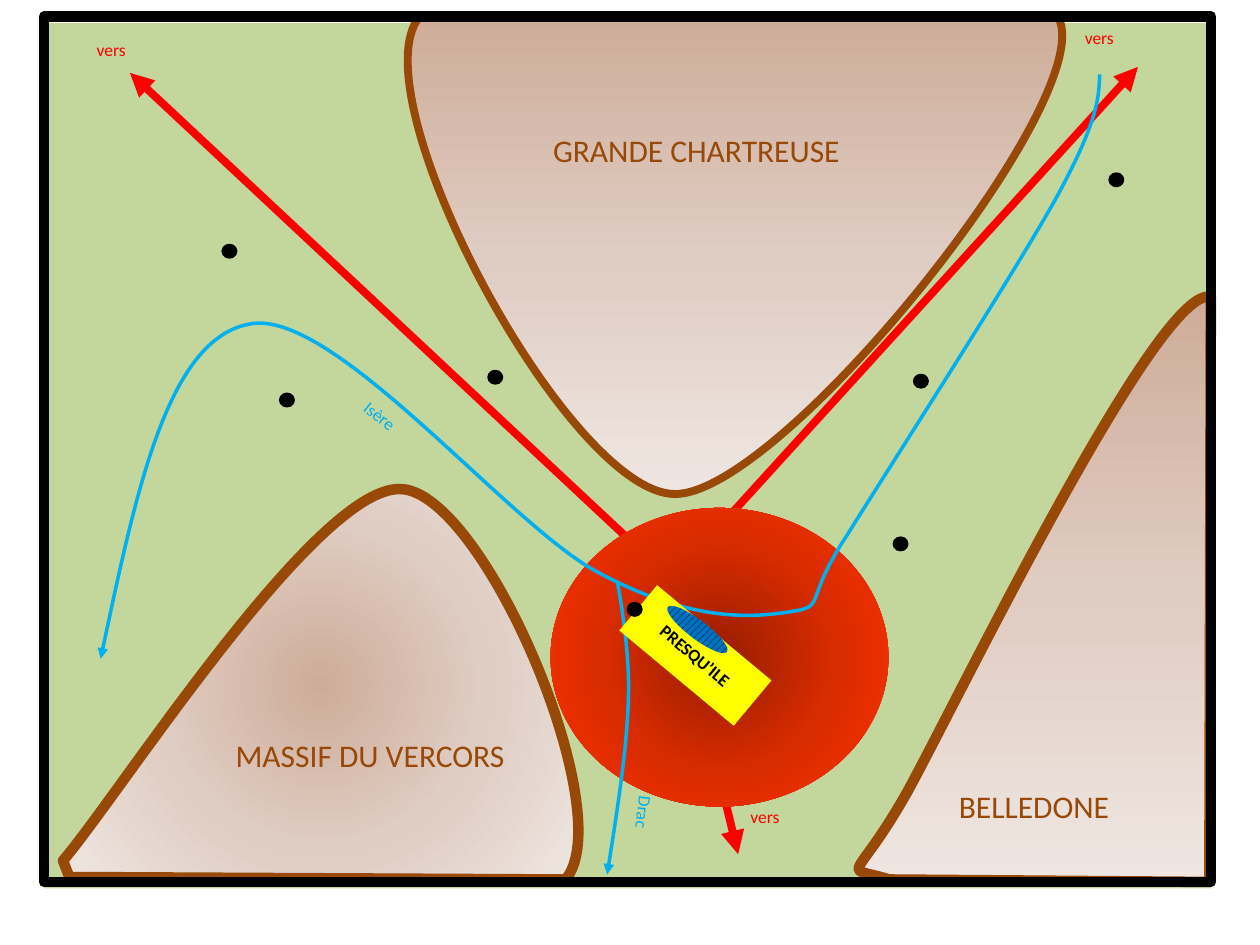
from dataclasses import dataclass

from lxml.etree import SubElement
from pptx import Presentation
from pptx.dml.color import RGBColor
from pptx.enum.dml import MSO_PATTERN
from pptx.enum.shapes import MSO_CONNECTOR, MSO_SHAPE
from pptx.enum.text import MSO_ANCHOR, MSO_AUTO_SIZE as AutoSize, PP_ALIGN
from pptx.oxml.ns import qn
from pptx.util import Cm, Pt


@dataclass(frozen=True)
class Theme:
    font: str = "Calibri"
    small: int = 10
    large: int = 18
    plain: str = "C3D69B"
    road: str = "FF0000"
    river: str = "00B0F0"
    ridge: str = "984807"
    black: str = "000000"
    yellow: str = "FFFF00"
    blue: str = "0070C0"
    mountain: tuple = ("CEAC99", "DFCCC2", "EFE6E1")
    city: tuple = ("971E00", "D72B00", "FF3300")


THEME = Theme()


def rgb(color):
    return RGBColor.from_string(color)


def set_line(shape, color=None, width=0):
    if color is None:
        shape.line.fill.background()
    else:
        shape.line.fill.solid()
        shape.line.color.rgb = rgb(color)
        shape.line.width = Pt(width)


def set_fill(shape, color=None):
    if color is None:
        shape.fill.background()
    else:
        shape.fill.solid()
        shape.fill.fore_color.rgb = rgb(color)


def set_gradient(shape, colors, radial=False):
    """Three even stops, running downwards or outwards from the centre."""
    shape.fill.gradient()
    gradient = shape.element.spPr.find(qn("a:gradFill"))
    for child in list(gradient):
        gradient.remove(child)
    stops = SubElement(gradient, qn("a:gsLst"))
    for position, color in zip((0, 50000, 100000), colors):
        stop = SubElement(stops, qn("a:gs"), pos=str(position))
        SubElement(stop, qn("a:srgbClr"), val=color)
    if radial:
        circle = SubElement(gradient, qn("a:path"), path="circle")
        SubElement(circle, qn("a:fillToRect"), l="50000", t="50000", r="50000", b="50000")
    else:
        SubElement(gradient, qn("a:lin"), ang="5400000", scaled="0")


def add_arrowheads(shape, *ends):
    line = shape.line._get_or_add_ln()
    for end in ends:  # headEnd comes before tailEnd
        SubElement(line, qn(f"a:{end}"), type="triangle")


def add_preset(slide, kind, box, fill=None, line=None, width=0, rotation=0):
    shape = slide.shapes.add_shape(kind, *map(Cm, box))
    shape.shadow.inherit = False
    shape.rotation = rotation
    set_fill(shape, fill)
    set_line(shape, line, width)
    return shape


def add_outline(slide, box, start, steps, color, width, closed=False):
    """Freeform in a box; a step has one point (line) or three (curve)."""
    left, top, wide, high = map(Cm, box)
    builder = slide.shapes.build_freeform(left, top)
    builder.add_line_segments([(left + wide, top + high)], close=False)
    shape = builder.convert_to_shape()
    shape.shadow.inherit = False
    set_fill(shape)
    set_line(shape, color, width)

    outline = next(shape.element.iter(qn("a:path")))
    for child in list(outline):
        outline.remove(child)
    commands = [("moveTo", [start])]
    commands += [("cubicBezTo" if len(step) == 3 else "lnTo", step) for step in steps]
    for command, points in commands:
        node = SubElement(outline, qn(f"a:{command}"))
        for x, y in points:
            SubElement(node, qn("a:pt"), x=str(Cm(x) - left), y=str(Cm(y) - top))
    if closed:
        SubElement(outline, qn("a:close"))
    return shape


def style_text(paragraph, text, size, color, bold=None):
    paragraph.text = text
    font = paragraph.font
    font.name, font.size, font.bold = THEME.font, Pt(size), bold
    font.color.rgb = rgb(color)


def add_label(slide, text, box, size, color, rotation=0):
    label = slide.shapes.add_textbox(*map(Cm, box))
    label.rotation = rotation
    label.text_frame.word_wrap = True
    label.text_frame.auto_size = AutoSize.SHAPE_TO_FIT_TEXT
    style_text(label.text_frame.paragraphs[0], text, size, color)


def add_roads(slide):
    valleys = add_outline(slide, (2.62, 1.35, 20.32, 10.33), (2.62, 1.47),
                          [[(13.54, 11.68)], [(22.94, 1.35)]], THEME.road, 4.5)
    add_arrowheads(valleys, "headEnd", "tailEnd")
    south = slide.shapes.add_connector(MSO_CONNECTOR.STRAIGHT, Cm(13.54), Cm(11.68),
                                       Cm(14.88), Cm(17.22))
    set_line(south, THEME.road, 4.5)
    add_arrowheads(south, "tailEnd")
    SubElement(south.element.spPr, qn("a:effectLst"))


def add_mountains(slide):
    chartreuse = ((8.23, 0.33, 13.18, 9.63), (8.46, 0.33), [
        [(7.16, 1.93), (11.46, 9.96), (13.61, 9.96)],
        [(15.75, 9.96), (22.17, 1.98), (21.34, 0.36)]], 4.5, False)
    vercors = ((1.27, 9.86, 10.39, 7.87), (1.27, 17.35), [
        [(2.39, 16.05), (6.38, 9.78), (8.08, 9.86)],
        [(9.75, 9.91), (12.52, 16.43), (11.4, 17.73)],
        [(1.4, 17.68)]], 6, True)
    belledonne = ((17.3, 5.99, 7.11, 11.79), (24.41, 5.99), [
        [(23.39, 5.69), (19.38, 13.97), (18.31, 15.93)],
        [(17.22, 17.88), (16.92, 17.42), (17.93, 17.73)],
        [(24.38, 17.78)]], 6, False)
    for box, start, steps, width, radial in (chartreuse, vercors, belledonne):
        massif = add_outline(slide, box, start, steps, THEME.ridge, width, closed=True)
        set_gradient(massif, THEME.mountain, radial)


def add_rivers(slide):
    drac = ((12.24, 11.76, 0.43, 5.87), (12.24, 17.63), [
        [(12.45, 16.31), (12.65, 14.99), (12.67, 14.02)],
        [(12.7, 13.03), (12.45, 11.76), (12.45, 11.76)]])
    isere = ((2.03, 1.5, 20.12, 11.76), (2.03, 13.28), [
        [(2.72, 10.03), (3.38, 6.81), (5.05, 6.53)],
        [(6.73, 6.22), (10.24, 10.57), (12.04, 11.53)],
        [(13.84, 12.5), (15.04, 12.47), (15.88, 12.34)],
        [(16.71, 12.22), (16.15, 12.19), (17.07, 10.8)],
        [(17.96, 9.37), (20.45, 5.51), (21.31, 3.96)],
        [(22.15, 2.41), (22.15, 1.96), (22.17, 1.5)]])
    for box, start, steps in (drac, isere):
        add_arrowheads(add_outline(slide, box, start, steps, THEME.river, 2), "headEnd")


def add_labels(slide):
    add_label(slide, "Isère", (6.91, 8.48, 2.59, 0.69), THEME.small, THEME.river, 38.6)
    add_label(slide, "Drac", (12.29, 16.13, 1.35, 0.69), THEME.small, THEME.river, 97.1)
    for left, top, width in ((1.7, 0.66, 3.68), (14.88, 16.13, 2.36), (21.62, 0.41, 3.68)):
        add_label(slide, "vers", (left, top, width, 0.69), THEME.small, THEME.road)
    for name, left, top in (("GRANDE CHARTREUSE", 10.9, 2.51),
                            ("MASSIF DU VERCORS", 4.5, 14.71),
                            ("BELLEDONE", 19.08, 15.75)):
        add_label(slide, name, (left, top, 6.32, 1.02), THEME.large, THEME.ridge)


def add_presquile(slide):
    district = add_preset(slide, MSO_SHAPE.RECTANGLE, (12.52, 12.62, 3, 1.19),
                          THEME.yellow, rotation=39.8)
    frame = district.text_frame
    frame.vertical_anchor = MSO_ANCHOR.MIDDLE
    frame.paragraphs[0].alignment = PP_ALIGN.CENTER
    style_text(frame.paragraphs[0], "PRESQU’ILE", THEME.small, THEME.black, bold=True)

    hatched = add_preset(slide, MSO_SHAPE.OVAL, (13.31, 12.5, 1.5, 0.38), rotation=37.2)
    hatched.fill.patterned()
    hatched.fill.pattern = MSO_PATTERN.WIDE_UPWARD_DIAGONAL
    hatched.fill.fore_color.rgb = rgb(THEME.black)
    hatched.fill.back_color.rgb = rgb(THEME.blue)


def main():
    presentation = Presentation()
    presentation.slide_width, presentation.slide_height = Cm(25.4), Cm(19.05)
    slide = presentation.slides.add_slide(presentation.slide_layouts[6])

    # Plain, roads and city
    add_preset(slide, MSO_SHAPE.RECTANGLE, (0.89, 0.46, 23.52, 17.45), THEME.plain)
    add_roads(slide)
    city = add_preset(slide, MSO_SHAPE.OVAL, (11.1, 10.24, 6.81, 6.02))
    set_gradient(city, THEME.city, radial=True)

    # Relief, water and names
    add_mountains(slide)
    add_rivers(slide)
    add_labels(slide)

    # Map frame, central district and towns
    add_preset(slide, MSO_SHAPE.RECTANGLE, (0.89, 0.33, 23.52, 17.45),
               line=THEME.black, width=6)
    add_presquile(slide)
    for left, top in ((5.66, 7.95), (18.44, 7.57), (18.03, 10.85), (9.86, 7.49),
                      (12.67, 12.17), (4.5, 4.95), (22.38, 3.51)):
        add_preset(slide, MSO_SHAPE.OVAL, (left, top, 0.25, 0.23),
                   THEME.black, THEME.black, 2)

    presentation.save("out.pptx")


if __name__ == "__main__":
    main()
